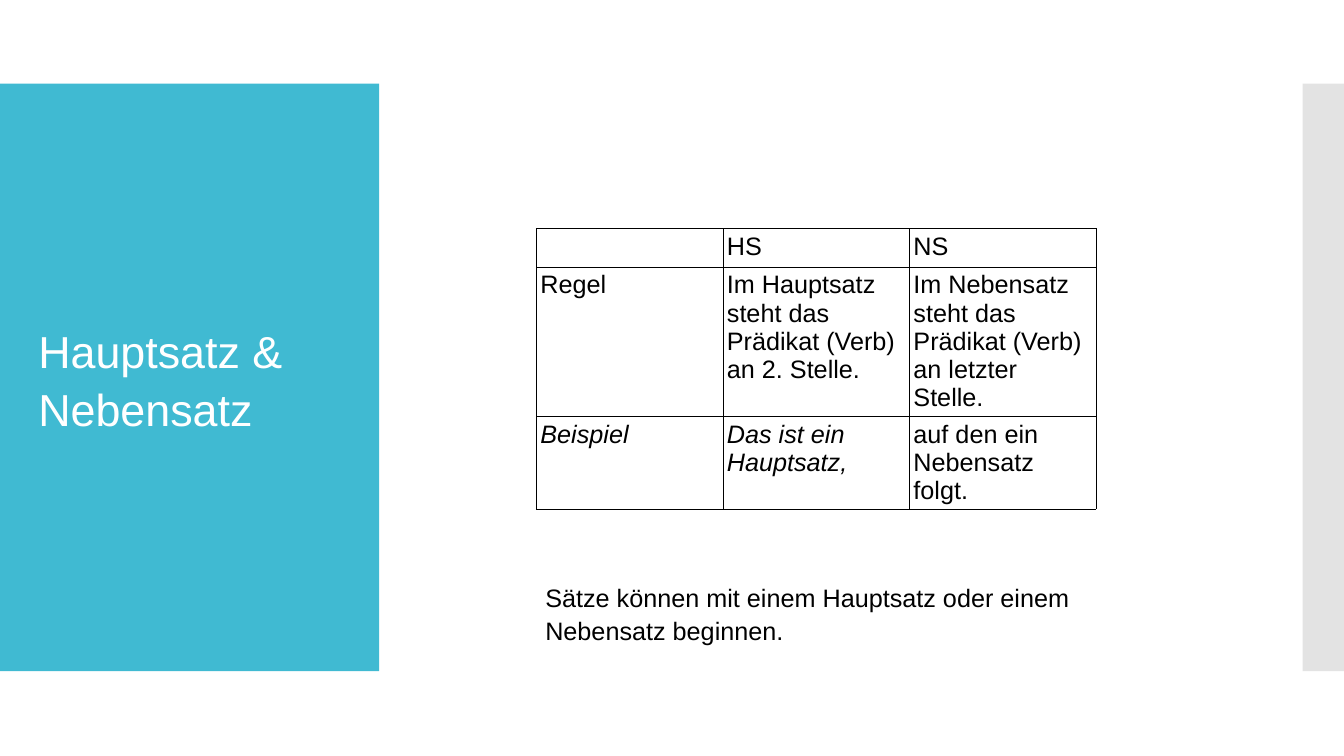
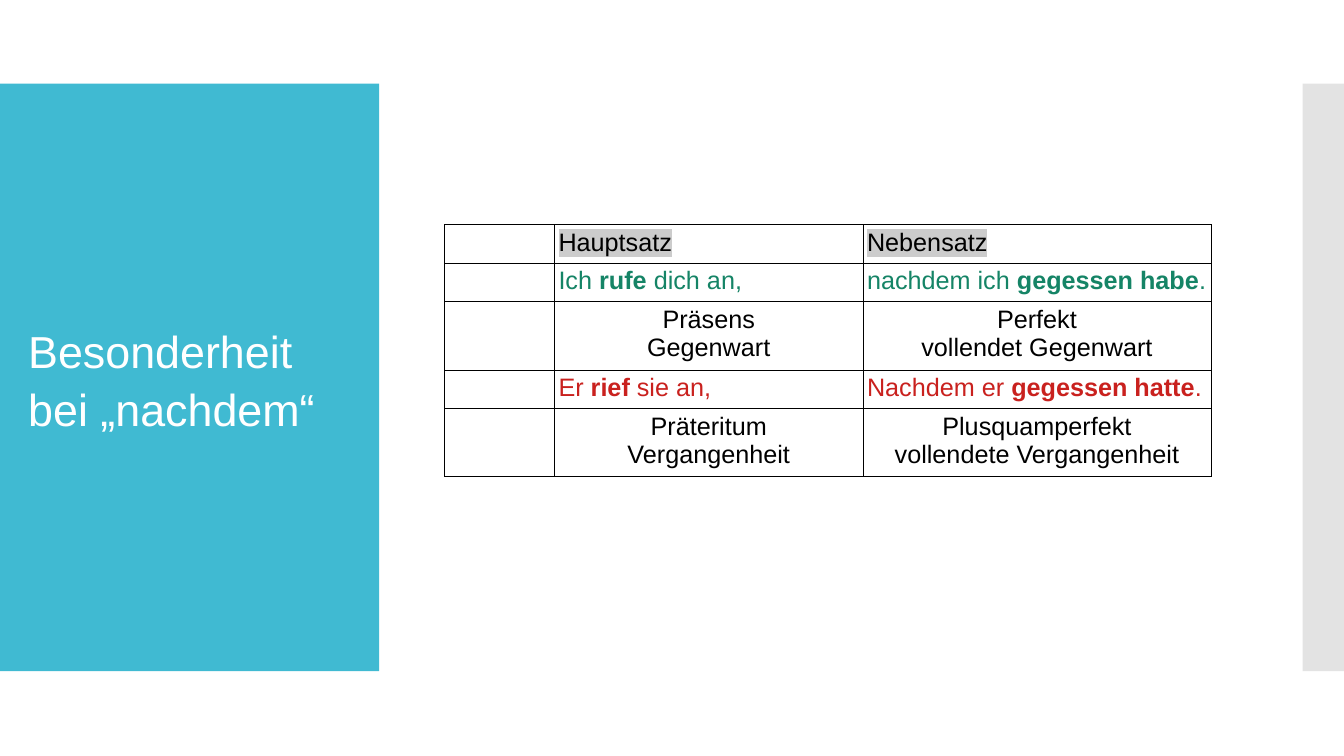
"""Build two German grammar slides about main and subordinate clauses."""
import pptx
import pptx.dml.color
import pptx.enum.shapes
import pptx.enum.text
import pptx.oxml
import pptx.oxml.ns
import pptx.util

RGBColor = pptx.dml.color.RGBColor
Align = pptx.enum.text.PP_ALIGN

EMU_PER_PX = 9144
FONT = "Arial"
TITLE_SIZE = 32
BODY_SIZE = 18
LINE_SPACING = 1.07
CELL_INSET = 4
BORDER_WIDTH = 0.57
BAND_TOP, BAND_HEIGHT = 83, 583

WHITE = RGBColor(0xFF, 0xFF, 0xFF)
BLACK = RGBColor(0x00, 0x00, 0x00)
TURQUOISE = RGBColor(0x40, 0xBA, 0xD2)
GREY = RGBColor(0xC8, 0xC8, 0xC8)
MARKER = RGBColor(0xCC, 0xCC, 0xCC)
GREEN = RGBColor(0x15, 0x84, 0x66)
RED = RGBColor(0xC9, 0x21, 0x1E)

HEADER = {"highlight": MARKER}
ITALIC = {"italic": True}
CENTRED = {"alignment": Align.CENTER}
PRESENT = {"color": GREEN}
PAST = {"color": RED}

CLAUSE_ROWS = [
    [("", {}), ("HS", {}), ("NS", {})],
    [("Regel", {}),
     ("Im Hauptsatz steht das Prädikat (Verb) an 2. Stelle.", {}),
     ("Im Nebensatz steht das Prädikat (Verb) an letzter Stelle.", {})],
    [("Beispiel", ITALIC), ("Das ist ein Hauptsatz,", ITALIC),
     ("auf den ein Nebensatz folgt.", {})],
]
TENSE_ROWS = [
    [("", {}), ("Hauptsatz", HEADER), ("Nebensatz", HEADER)],
    [("", {}), ("Ich **rufe** dich an,", PRESENT),
     ("nachdem ich **gegessen habe**.", PRESENT)],
    [("", {}), ("Präsens\nGegenwart", CENTRED),
     ("Perfekt\nvollendet Gegenwart", CENTRED)],
    [("", {}), ("Er **rief** sie an,", PAST),
     ("Nachdem er **gegessen hatte**.", PAST)],
    [("", {}), ("Präteritum\nVergangenheit", CENTRED),
     ("Plusquamperfekt\nvollendete Vergangenheit", CENTRED)],
]


def px(length):
    """Turn px into EMU."""
    return pptx.util.Emu(length * EMU_PER_PX)


def box(*lengths):
    """Turn left, top, width and height in px into EMU."""
    return [px(length) for length in lengths]


def drawing_xml(content):
    """Parse an XML element of the drawing namespace."""
    tag, rest = content.split(" ", 1)
    return pptx.oxml.parse_xml(f"{tag} {pptx.oxml.ns.nsdecls('a')} {rest}")


def style_font(font, size, color):
    """Set the typeface, size and colour of a font."""
    font.name = FONT
    font.size = pptx.util.Pt(size)
    font.color.rgb = color


def add_band(slide, layout, left, width, color, opacity=100):
    """Draw a band and move it behind everything on the layout."""
    shape = slide.shapes.add_shape(
        pptx.enum.shapes.MSO_SHAPE.RECTANGLE,
        *box(left, BAND_TOP, width, BAND_HEIGHT))
    shape.shadow.inherit = False
    shape.line.fill.background()
    shape.fill.solid()
    shape.fill.fore_color.rgb = color
    if opacity < 100:
        color_element = shape.element.find(".//" + pptx.oxml.ns.qn("a:srgbClr"))
        color_element.append(drawing_xml(f'<a:alpha val="{opacity * 1000}"/>'))
    layout.shapes.element.insert(2, shape.element)


def set_title(slide, text, inset):
    """Place and format the title over the left band."""
    title = slide.shapes.title
    title.left, title.top, title.width, title.height = box(28, 123, 322, 503)
    frame = title.text_frame
    frame.text = text
    frame.word_wrap = True
    frame.auto_size = pptx.enum.text.MSO_AUTO_SIZE.NONE
    frame.vertical_anchor = pptx.enum.text.MSO_ANCHOR.MIDDLE
    frame.margin_left = frame.margin_right = px(inset)
    frame.margin_top = frame.margin_bottom = px(inset // 2)
    paragraph = frame.paragraphs[0]
    paragraph.alignment = Align.LEFT
    paragraph.line_spacing = LINE_SPACING
    style_font(paragraph.font, TITLE_SIZE, WHITE)


def add_note(slide, text, left, top, width, height):
    """Add a wrapped text box in body style."""
    frame = slide.shapes.add_textbox(*box(left, top, width, height)).text_frame
    frame.word_wrap = True
    frame.text = text
    paragraph = frame.paragraphs[0]
    paragraph.line_spacing = LINE_SPACING
    style_font(paragraph.font, BODY_SIZE, BLACK)


def add_borders(cell):
    """Draw a thin line on each side of a cell."""
    width = pptx.util.Pt(BORDER_WIDTH)
    properties = cell._tc.get_or_add_tcPr()
    for index, side in enumerate("LRTB"):
        properties.insert(index, drawing_xml(
            f'<a:ln{side} w="{width}"><a:solidFill>'
            f'<a:srgbClr val="{BLACK}"/></a:solidFill></a:ln{side}>'))


def fill_cell(cell, text, color=BLACK, italic=None, highlight=None,
              alignment=Align.LEFT):
    """Write a cell, with bold between double asterisks."""
    cell.margin_left = cell.margin_right = px(CELL_INSET)
    cell.margin_top = cell.margin_bottom = px(CELL_INSET)
    cell.fill.background()
    add_borders(cell)
    cell.text = text
    for paragraph in cell.text_frame.paragraphs:
        parts = paragraph.text.split("**")
        paragraph.clear()
        paragraph.alignment = alignment
        style_font(paragraph.font, BODY_SIZE, color)
        paragraph.font.italic = italic
        for index, part in enumerate(parts):
            if not part:
                continue
            run = paragraph.add_run()
            run.text = part
            if index % 2:
                run.font.bold = True
            if highlight:
                run.font._element.append(drawing_xml(
                    f'<a:highlight ><a:srgbClr val="{highlight}"/></a:highlight>'))


def add_grid(slide, left, top, widths, heights, rows):
    """Add a bordered table without a banded style."""
    table = slide.shapes.add_table(
        len(heights), len(widths),
        *box(left, top, sum(widths), sum(heights))).table
    table.first_row = table.horz_banding = False
    for column, width in zip(table.columns, widths):
        column.width = px(width)
    for row, height, contents in zip(table.rows, heights, rows):
        row.height = px(height)
        for cell, (text, style) in zip(row.cells, contents):
            fill_cell(cell, text, **style)


def main():
    """Build and save the presentation."""
    presentation = pptx.Presentation()
    presentation.slide_width, presentation.slide_height = box(1333, 750)
    layout = presentation.slide_layouts.get_by_name("Title Only")

    slide = presentation.slides.add_slide(layout)
    add_band(slide, layout, 0, 376, TURQUOISE)
    add_band(slide, layout, 1292, 42, GREY, opacity=50)
    set_title(slide, "Hauptsatz & Nebensatz", inset=10)
    add_grid(slide, 532, 227, [185] * 3, [38, 148, 92], CLAUSE_ROWS)
    add_note(slide, "Sätze können mit einem Hauptsatz oder einem Nebensatz "
             "beginnen.", 531, 571, 551, 66)

    slide = presentation.slides.add_slide(layout)
    set_title(slide, "Besonderheit bei „nachdem“", inset=0)
    add_grid(slide, 441, 223, [109, 306, 345], [38, 38, 68, 38, 68], TENSE_ROWS)

    presentation.save("out.pptx")


if __name__ == "__main__":
    main()
